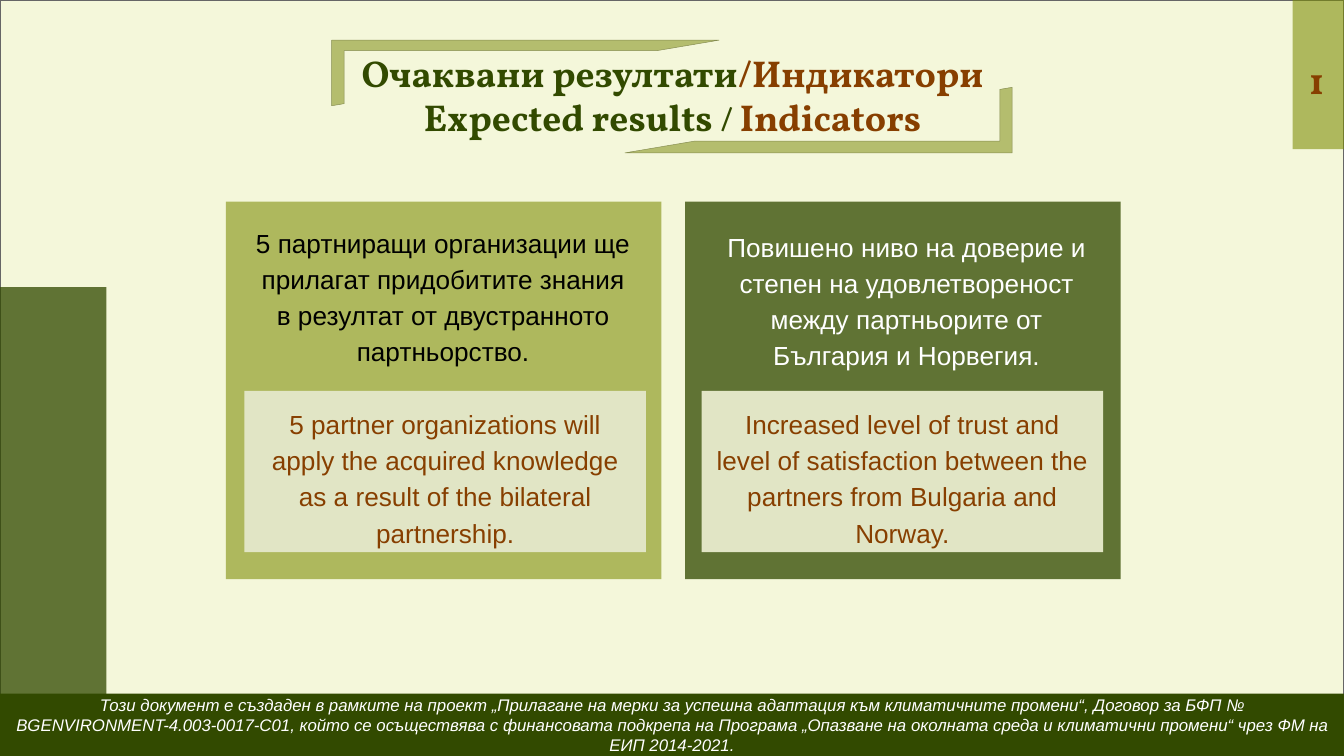
from pptx import Presentation
from pptx.util import Cm, Pt
from pptx.dml.color import RGBColor
from pptx.enum.shapes import MSO_SHAPE as SHAPE
from pptx.enum.text import PP_ALIGN as ALIGN, MSO_ANCHOR as ANCHOR
from lxml.etree import SubElement
from pptx.oxml.ns import qn

OLIVE, FOREST, BROWN, WHITE = "7C8C03", "324A00", "873F00", "FFFFFF"
INSET = Cm(0.25)


def add_box(box, kind=SHAPE.RECTANGLE, fill=None, alpha=None, line=None, width=0.25):
    s = prs.slides[0].shapes.add_shape(kind, *[Cm(v) for v in box])
    s.shadow.inherit = False
    if fill:
        s.fill.solid()
        s.fill.fore_color.rgb = RGBColor.from_string(fill)
    else:
        s.fill.background()
    if alpha:
        clr = s.fill._xPr.find(".//" + qn("a:srgbClr"))
        SubElement(clr, qn("a:alpha")).set("val", str(alpha * 1000))
    if line:
        s.line.color.rgb = RGBColor.from_string(line)
        s.line.width = Pt(width)
    else:
        s.line.fill.background()
    return s


def write(sp, lines, frame={}, para={}, **font):
    tf = sp.text_frame
    base = {"word_wrap": True, "vertical_anchor": ANCHOR.TOP, "margin_left": INSET,
            "margin_right": INSET, "margin_top": INSET, "margin_bottom": INSET}
    for name, value in {**base, **frame}.items():
        setattr(tf, name, value)
    p = tf.paragraphs[0]
    for name, value in {"alignment": ALIGN.CENTER, **para}.items():
        setattr(p, name, value)
    for i, runs in enumerate(lines):
        if i:
            p.add_line_break()
        for text, color, size in runs:
            r = p.add_run()
            r.text = text
            r.font.color.rgb = RGBColor.from_string(color)
            for name, value in {"size": Pt(size), **font}.items():
                setattr(r.font, name, value)


prs = Presentation()
prs.slide_width, prs.slide_height = Cm(25.4), Cm(14.29)
slide = prs.slides.add_slide(prs.slide_layouts[6])

add_box((0, 0, 25.4, 14.29), fill="F4F7DA", line="666666", width=0.75)
for box, color, alpha in [
    ((4.27, 3.81, 8.23, 7.14), OLIVE, 58),
    ((12.95, 3.81, 8.23, 7.14), FOREST, 76),
    ((24.43, 0, 0.97, 2.82), OLIVE, 58),
    ((0, 5.43, 2.01, 8.86), FOREST, 76),
]:
    add_box(box, fill=color, alpha=alpha)

title = slide.shapes.add_textbox(Cm(6.27), Cm(0.69), Cm(12.88), Cm(1.93))
write(title, [
    [("Очаквани резултати", FOREST, 20), ("/Индикатори", BROWN, 20)],
    [("Expected results ", FOREST, 20), ("/ ", FOREST, 18), ("Indicators", BROWN, 20)],
], name="Vollkorn", bold=True)

for box, fill, color, text in [
    ((13.26, 4.04, 7.75, 3.61), None, WHITE,
     "Повишено ниво на доверие и степен на удовлетвореност между партньорите от България и Норвегия."),
    ((13.26, 7.39, 7.59, 3.05), "E1E5C5", BROWN,
     "Increased level of trust and level of satisfaction between the partners from Bulgaria and Norway."),
    ((4.5, 3.96, 7.75, 3.61), None, "000000",
     "5 партниращи организации ще прилагат придобитите знания в резултат от двустранното партньорство."),
    ((4.62, 7.39, 7.59, 3.05), "E1E5C5", BROWN,
     "5 partner organizations will apply the acquired knowledge as a result of the bilateral partnership."),
]:
    sp = add_box(box, fill=fill)
    write(sp, [[(text, color, 14)]], para={"line_spacing": 1.15}, name="Arial")

for left, top, angle, thickness in [(6.27, 0.76, 0, 0.16), (11.81, 1.65, 180, 0.18)]:
    s = add_box((left, top, 7.32, 1.24), SHAPE.HALF_FRAME, fill="B4BD6E", line="858C51")
    s.rotation = angle
    s.adjustments[0], s.adjustments[1] = thickness, 0.19

number = slide.shapes.add_textbox(Cm(24.49), Cm(0.84), Cm(0.84), Cm(1.63))
write(number, [[("1", BROWN, 20)]], para={"alignment": ALIGN.LEFT}, name="Vollkorn", bold=True)

footer = add_box((0, 13.11, 25.4, 1.19), fill=FOREST)
write(footer, [[(
    "Този документ е създаден в рамките на проект „Прилагане на мерки за успешна адаптация "
    "към климатичните промени“, Договор за БФП № BGENVIRONMENT-4.003-0017-С01, който се "
    "осъществява с финансовата подкрепа на Програма „Опазване на околната среда и климатични "
    "промени“ чрез ФМ на ЕИП 2014-2021.", WHITE, 9)]],
    frame={"vertical_anchor": ANCHOR.MIDDLE, "margin_top": Cm(0.13), "margin_bottom": Cm(0.13)},
    name="Arial", italic=True)

prs.save("out.pptx")
